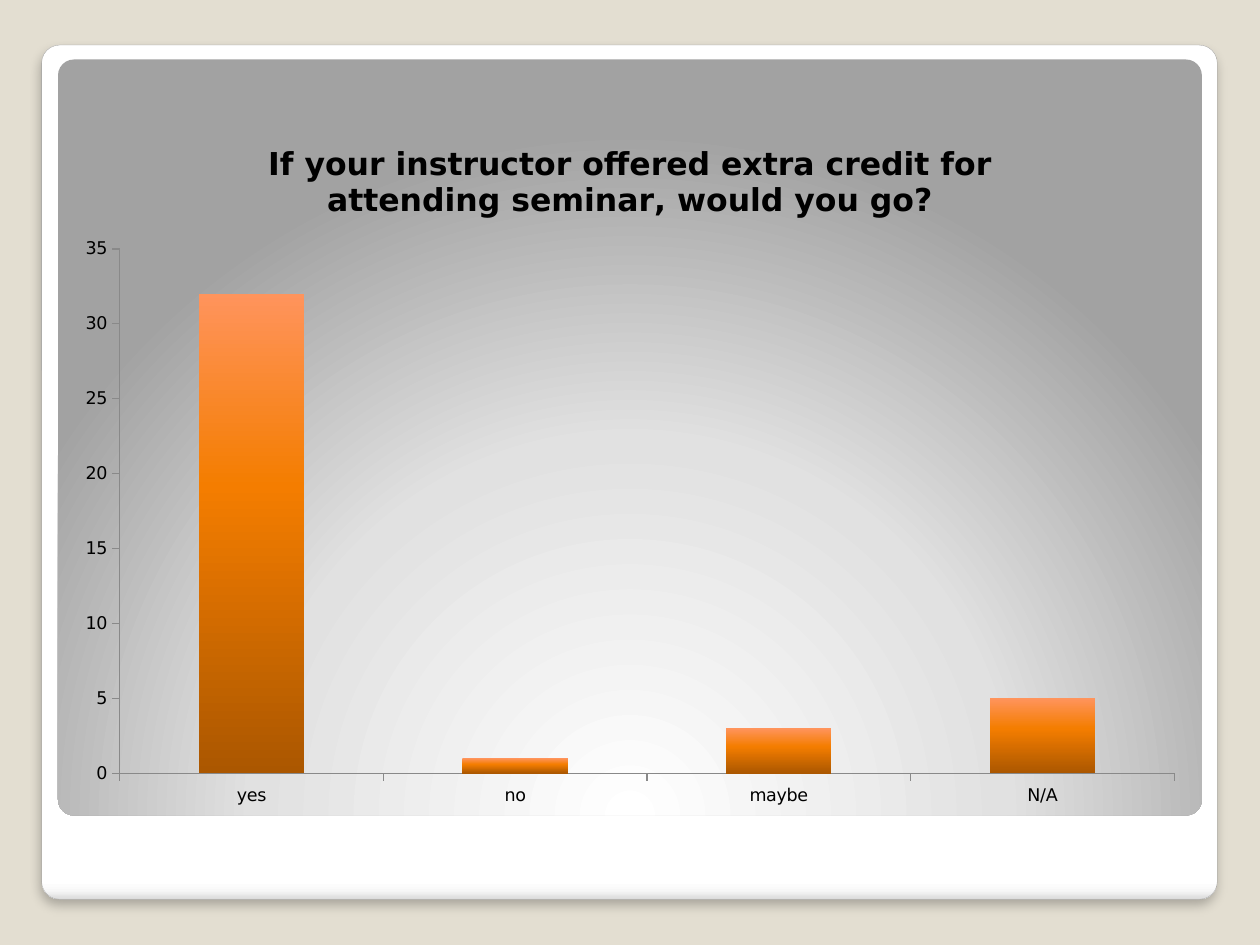
from pptx import Presentation, util as u
from pptx.chart.data import CategoryChartData
from pptx.dml.color import RGBColor
from pptx.enum import chart as ch, shapes
from pptx.oxml import parse_xml
from pptx.oxml.ns import nsdecls, qn

QUESTION = "If your instructor offered extra credit for attending seminar, would you go?"
ANSWERS = [("yes", 32), ("no", 1), ("maybe", 3), ("N/A", 5)]
FONT = "DejaVu Sans"

BEIGE = RGBColor(0xE3, 0xDE, 0xD1)
BLACK = RGBColor(0, 0, 0)
EDGE_GRAY = RGBColor(0xA4, 0xA4, 0xA4)
AXIS_GRAY = RGBColor(0x89, 0x89, 0x89)
WHITE = RGBColor(255, 255, 255)
ORANGE = RGBColor(0xF0, 0x7F, 0x09)

DOWN = '<a:lin ang="5400000" scaled="0"/>'
GLOW = ('<a:path path="circle"><a:fillToRect l="50000" t="175000" '
        'r="50000" b="-75000"/></a:path>')
CARD_STOPS = [(0, "FFFFFF"), (98, "FFFFFF"), (99, "F7F7F7"), (100, "DADADA")]
PANEL_STOPS = [(0, "FFFFFF"), (55, "E1E1E1"), (100, "A2A2A2")]
BAR_STOPS = [(0, "FF945C"), (40, "F47D00"), (100, "AB5700")]
SHADOW = (f'<a:outerShdw {nsdecls("a")} blurRad="{u.Pt(6)}" dist="{u.Pt(4)}" '
          'dir="5400000" algn="tl" rotWithShape="0">'
          '<a:srgbClr val="000000"><a:alpha val="25000"/></a:srgbClr></a:outerShdw>')
PLOT_AREA = {"x": 0.05, "y": 0.19, "w": 0.93, "h": 0.75}


def set_gradient(properties, stops, direction):
    marks = "".join(f'<a:gs pos="{pos * 1000}"><a:srgbClr val="{color}"/></a:gs>'
                    for pos, color in stops)
    gradient = parse_xml(f'<a:gradFill {nsdecls("a")} rotWithShape="1">'
                         f'<a:gsLst>{marks}</a:gsLst>{direction}</a:gradFill>')
    properties.replace(properties.find(qn("a:solidFill")), gradient)


def add_card(slide, box, stops, direction):
    card = slide.shapes.add_shape(shapes.MSO_SHAPE.ROUNDED_RECTANGLE, *map(u.Cm, box))
    card.adjustments[0] = 0.021
    card.fill.solid()
    card.fill.fore_color.rgb = WHITE
    card.line.fill.background()
    card.shadow.inherit = False
    set_gradient(card.element.spPr, stops, direction)
    return card


def add_answers(slide):
    data = CategoryChartData()
    data.categories = [answer for answer, _ in ANSWERS]
    data.add_series("Series 1", [votes for _, votes in ANSWERS])
    chart = slide.shapes.add_chart(ch.XL_CHART_TYPE.COLUMN_CLUSTERED, u.Cm(1.27), u.Cm(2.34),
                                   u.Cm(22.86), u.Cm(14.1), data).chart
    chart.font.name, chart.font.size = FONT, u.Pt(10)
    chart.font.color.rgb = BLACK
    chart.has_legend = False

    chart.has_title = True
    chart.chart_title.include_in_layout = False
    chart.chart_title.text_frame.text = QUESTION
    title_font = chart.chart_title.text_frame.paragraphs[0].font
    title_font.name, title_font.size, title_font.bold = FONT, u.Pt(18), True
    title_font.color.rgb = BLACK

    for axis in (chart.category_axis, chart.value_axis):
        axis.has_major_gridlines = False
        axis.major_tick_mark = ch.XL_TICK_MARK.OUTSIDE
        axis.minor_tick_mark = ch.XL_TICK_MARK.NONE
        axis.format.line.color.rgb = AXIS_GRAY
        axis.format.line.width = u.Pt(0.75)
    chart.value_axis.minimum_scale = 0
    chart.value_axis.maximum_scale = 35
    chart.value_axis.major_unit = 5

    plot = chart.plots[0]
    plot.gap_width = 150
    plot.vary_by_categories = False
    bars = plot.series[0].format
    bars.fill.solid()
    bars.fill.fore_color.rgb = ORANGE
    bars.line.fill.background()
    set_gradient(chart.element.xpath(".//c:ser/c:spPr")[0], BAR_STOPS, DOWN)

    area = chart.element.xpath(".//c:plotArea")[0]
    for old_layout in area.findall(qn("c:layout")):
        area.remove(old_layout)
    places = "".join(f'<c:{key} val="{share}"/>' for key, share in PLOT_AREA.items())
    area.insert(0, parse_xml(
        f'<c:layout {nsdecls("c")}><c:manualLayout><c:layoutTarget val="inner"/>'
        f'<c:xMode val="edge"/><c:yMode val="edge"/>{places}</c:manualLayout></c:layout>'))


def main():
    prs = Presentation()
    prs.slide_width, prs.slide_height = u.Cm(25.4), u.Cm(19.05)
    slide = prs.slides.add_slide(prs.slide_layouts[6])
    slide.background.fill.solid()
    slide.background.fill.fore_color.rgb = BEIGE

    frame = add_card(slide, (0.84, 0.91, 23.7, 17.22), CARD_STOPS, DOWN)
    frame.line.color.rgb = EDGE_GRAY
    frame.line.width = u.Pt(0.16)
    frame.element.spPr.find(qn("a:effectLst")).append(parse_xml(SHADOW))
    add_card(slide, (1.17, 1.2, 23.06, 15.24), PANEL_STOPS, GLOW)
    add_answers(slide)
    prs.save("out.pptx")


if __name__ == "__main__":
    main()
